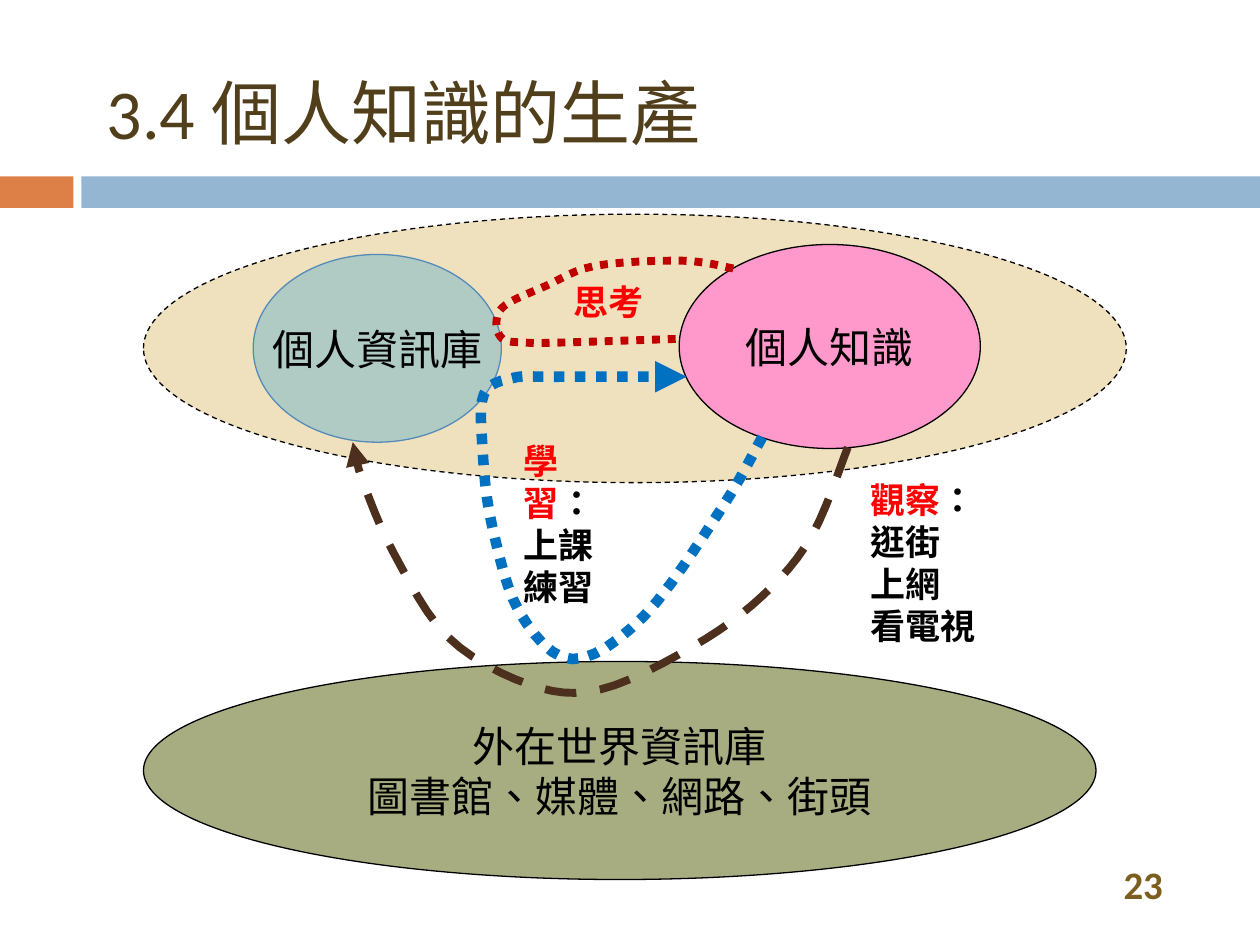
"""Build the slide on how personal knowledge is produced."""
from lxml.etree import SubElement
from pptx import Presentation
from pptx.dml.color import RGBColor
from pptx.enum.dml import MSO_LINE
from pptx.enum.lang import MSO_LANGUAGE_ID
from pptx.enum.shapes import MSO_SHAPE
from pptx.enum.text import MSO_ANCHOR, PP_ALIGN
from pptx.oxml.ns import qn
from pptx.util import Pt


def paint(color_format, color):
    color_format.rgb = RGBColor.from_string(color)


def write(shape, paragraphs, size, font, bold=False, align=PP_ALIGN.LEFT,
          anchor=MSO_ANCHOR.TOP, wrap=True):
    frame = shape.text_frame
    frame.word_wrap = wrap
    frame.vertical_anchor = anchor
    for index, runs in enumerate(paragraphs):
        paragraph = frame.add_paragraph() if index else frame.paragraphs[0]
        paragraph.alignment = align
        paragraph._p.get_or_add_pPr().set("hangingPunct", "0")
        for text, color in runs:
            run = paragraph.add_run()
            run.text = text
            run.font.size = Pt(size)
            run.font.name = font
            run.font.bold = bold
            run.font.language_id = MSO_LANGUAGE_ID.TRADITIONAL_CHINESE
            paint(run.font.color, color)


BLACK, RED = "000000", "FF0000"
SLIDE_WIDTH, SLIDE_HEIGHT = 720, 540
BAND_TOP, BAND_HEIGHT = 100.8, 18
ACCENT_WIDTH, BAND_GAP = 42, 4.5
REALM_LEFT = 82
CURVE_STEPS = 6

presentation = Presentation()
presentation.slide_width, presentation.slide_height = Pt(SLIDE_WIDTH), Pt(SLIDE_HEIGHT)
slide = presentation.slides.add_slide(presentation.slide_layouts[6])
shapes = slide.shapes

bar_left = ACCENT_WIDTH + BAND_GAP
for left, right, color in [(0, ACCENT_WIDTH, "DD8047"), (bar_left, SLIDE_WIDTH, "94B6D2")]:
    band = shapes.add_shape(MSO_SHAPE.RECTANGLE, Pt(left), Pt(BAND_TOP),
                            Pt(right - left), Pt(BAND_HEIGHT))
    band.shadow.inherit = False
    band.fill.solid()
    paint(band.fill.fore_color, color)
    band.line.fill.background()

realms = [
    ((REALM_LEFT, 122.4, 561.6, 153.4), "EFE0BE", BLACK, MSO_LINE.DASH, []),
    ((144.7, 145.4, 141.8, 107.3), "B0CAC4", "558BB8", MSO_LINE.SOLID, ["個人資訊庫"]),
    ((388.1, 139.7, 172.1, 116.6), "FF99CC", BLACK, MSO_LINE.SOLID, ["個人知識"]),
    ((REALM_LEFT, 378, 544.3, 124.6), "A7AD81", BLACK, MSO_LINE.SOLID,
     ["外在世界資訊庫", "圖書館、媒體、網路、街頭"]),
]
for box, fill, outline, dash, lines in realms:
    realm = shapes.add_shape(MSO_SHAPE.OVAL, *map(Pt, box))
    realm.shadow.inherit = False
    realm.fill.solid()
    paint(realm.fill.fore_color, fill)
    paint(realm.line.color, outline)
    realm.line.width = Pt(0.75)
    realm.line.dash_style = dash
    write(realm, [[(line, BLACK)] for line in lines], 24, "Arial",
          align=PP_ALIGN.CENTER, anchor=MSO_ANCHOR.MIDDLE, wrap=False)

title = shapes.add_textbox(Pt(54), Pt(31.7), Pt(647.3), Pt(64))
write(title, [[("3.4 個人知識的生產", "513E1B")]], 40, "Calibri", anchor=MSO_ANCHOR.MIDDLE)

page_number = shapes.add_textbox(Pt(620.6), Pt(491), Pt(51), Pt(28))
write(page_number, [[("23", "7C5F1E")]], 22.2, "Calibri", bold=True,
      align=PP_ALIGN.RIGHT, anchor=MSO_ANCHOR.MIDDLE)

activities = [
    ((490.3, 270, 141.8, 104.4), "觀察", "：", ["逛街", "上網", "看電視"]),
    ((320.4, 157, 86.4, 31.7), "思考", "", []),
    ((292.3, 247.7, 73.4, 80), "學習", "：", ["上課", "練習"]),
]
for box, heading, colon, examples in activities:
    activity = shapes.add_textbox(*map(Pt, box))
    heading_runs = [(heading, RED)] + ([(colon, BLACK)] if colon else [])
    write(activity, [heading_runs] + [[(example, BLACK)] for example in examples],
          20, "Arial", bold=True)

observing = [(484.5, 255.6), (464, 306), (435.6, 340.6), (396, 369.4), (343, 394),
             (302, 391), (256, 364), (225, 316), (207, 274), (201.6, 252.7)]
learning = [(435.6, 249.8), (412, 291), (368, 352), (327, 376.6), (297, 350), (281, 299.5),
            (275.8, 257), (276.5, 225.4), (293, 216), (317.5, 215.3), (392.4, 215.3)]
thinking = [(419, 153.4), (390, 149), (340, 152), (312, 163.4), (289, 174.2),
            (283.7, 184), (287.3, 193.7), (300, 195.8), (320, 195.8), (386.6, 193.7)]
flows = [
    (observing, "4C2F1C", 4.5, MSO_LINE.DASH, True),
    (learning, "0070C0", 6, MSO_LINE.ROUND_DOT, True),
    (thinking, "C00000", 4.5, MSO_LINE.ROUND_DOT, False),
]
for bends, color, weight, dash, has_arrow in flows:
    padded = [bends[0], *bends, bends[-1]]
    curve = []
    for neighbours in zip(padded, padded[1:], padded[2:], padded[3:]):
        for step in range(1, CURVE_STEPS + 1):
            t = step / CURVE_STEPS
            catmull_rom = (
                (-t + 2 * t**2 - t**3) / 2,
                (2 - 5 * t**2 + 3 * t**3) / 2,
                (t + 4 * t**2 - 3 * t**3) / 2,
                (t**3 - t**2) / 2,
            )
            curve.append(tuple(
                Pt(sum(share * value for share, value in zip(catmull_rom, axis)))
                for axis in zip(*neighbours)
            ))
    builder = shapes.build_freeform(*map(Pt, bends[0]))
    builder.add_line_segments(curve, close=False)
    flow = builder.convert_to_shape()
    flow.shadow.inherit = False
    flow.fill.background()
    paint(flow.line.color, color)
    flow.line.width = Pt(weight)
    flow.line.dash_style = dash
    if has_arrow:
        outline = flow.element.spPr.find(qn("a:ln"))
        SubElement(outline, qn("a:tailEnd"), type="triangle")

presentation.save("out.pptx")
